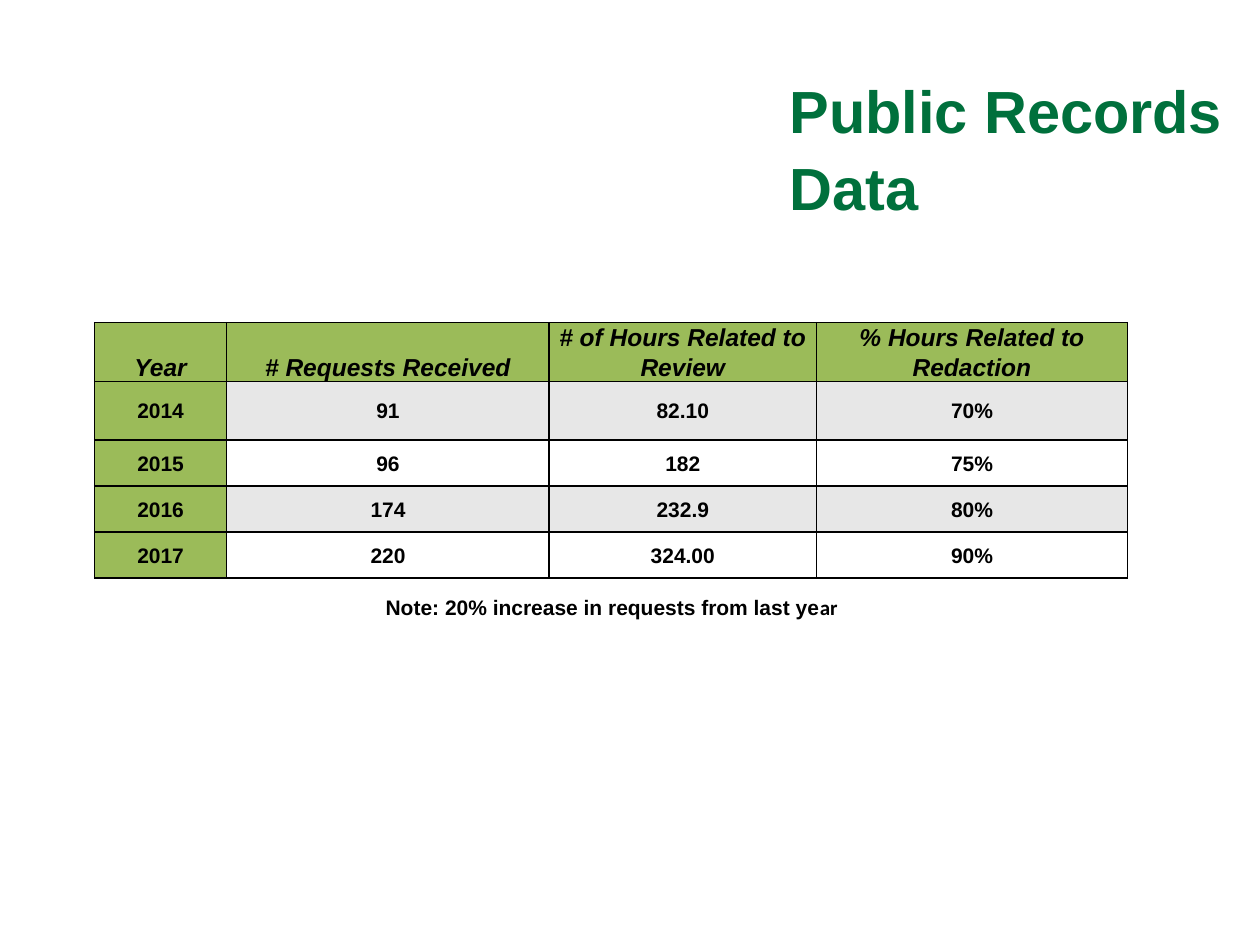
"""Build the Public Records Data slide with its yearly request table."""
from dataclasses import dataclass

from lxml.etree import SubElement
from pptx import Presentation
from pptx.dml.color import RGBColor as RGB
from pptx.enum.text import MSO_ANCHOR as Anchor, MSO_AUTO_SIZE as AutoSize, PP_ALIGN as Align
from pptx.oxml.ns import qn
from pptx.util import Pt


@dataclass(frozen=True)
class Theme:
    """Colours, fonts and type sizes of the slide."""
    title: RGB = RGB(0x00, 0x70, 0x3C)
    ink: RGB = RGB(0, 0, 0)
    accent: RGB = RGB(0x9B, 0xBB, 0x59)
    band: RGB = RGB(0xE7, 0xE7, 0xE7)
    plain: RGB = RGB(0xFF, 0xFF, 0xFF)
    font: str = "Arial"
    alt_font: str = "Calibri"
    title_size: float = 34
    header_size: float = 14
    body_size: float = 12
    spacing: float = 1.07
    border: float = 1


@dataclass(frozen=True)
class Box:
    """A rectangle in points."""
    left: float
    top: float
    width: float
    height: float

    def lengths(self) -> tuple:
        """Return the four sides as lengths."""
        return Pt(self.left), Pt(self.top), Pt(self.width), Pt(self.height)


@dataclass(frozen=True)
class YearRow:
    """Public records figures for one year."""
    year: str
    requests: str
    hours: str
    redaction: str

    def values(self) -> tuple:
        """Return the figures in column order."""
        return self.year, self.requests, self.hours, self.redaction


THEME = Theme()
TITLE_BOX = Box(444, 36, 269.5, 84)
TABLE_BOX = Box(54, 184.3, 590.4, 148.8)
NOTE_BOX = Box(139, 336.2, 421, 36)
COLUMN_WIDTHS = (75.6, 184.3, 152.7, 177.8)
ROW_HEIGHTS = (33.5, 33.5, 26.3, 26.3, 26.3)
HEADERS = ("Year", "# Requests Received", "# of Hours Related to Review",
           "% Hours Related to Redaction")
YEARS = (
    YearRow("2014", "91", "82.10", "70%"),
    YearRow("2015", "96", "182", "75%"),
    YearRow("2016", "174", "232.9", "80%"),
    YearRow("2017", "220", "324.00", "90%"),
)


def add_run(p, text: str, size: float, color: RGB = THEME.ink,
            font: str = THEME.font, italic: bool = False) -> None:
    """Add one bold run to a paragraph."""
    r = p.add_run()
    r.text = text
    r.font.name = font
    r.font.size = Pt(size)
    r.font.bold = True
    r.font.italic = italic
    r.font.color.rgb = color


def set_borders(cell) -> None:
    """Draw a thin line on all four sides of a cell."""
    tc_pr = cell._tc.get_or_add_tcPr()
    for i, side in enumerate(("lnL", "lnR", "lnT", "lnB")):
        ln = tc_pr.makeelement(qn(f"a:{side}"), {"w": str(Pt(THEME.border))})
        fill = SubElement(ln, qn("a:solidFill"))
        SubElement(fill, qn("a:srgbClr"), val=str(THEME.ink))
        tc_pr.insert(i, ln)


def fill_cell(cell, text: str, fill: RGB, header: bool) -> None:
    """Format one table cell and write its text."""
    cell.fill.solid()
    cell.fill.fore_color.rgb = fill
    cell.margin_left = cell.margin_right = Pt(5)
    cell.margin_top = cell.margin_bottom = Pt(0)
    cell.vertical_anchor = Anchor.BOTTOM if header else Anchor.MIDDLE
    set_borders(cell)
    p = cell.text_frame.paragraphs[0]
    p.alignment = Align.CENTER
    p.line_spacing = THEME.spacing
    add_run(p, text, THEME.header_size if header else THEME.body_size, italic=header)


def add_title(s) -> None:
    """Place and format the title placeholder."""
    sp = s.shapes.title
    sp.left, sp.top, sp.width, sp.height = TITLE_BOX.lengths()
    tf = sp.text_frame
    tf.word_wrap = True
    tf.auto_size = AutoSize.NONE
    tf.vertical_anchor = Anchor.TOP
    p = tf.paragraphs[0]
    p.alignment = Align.LEFT
    p.line_spacing = THEME.spacing
    add_run(p, "Public Records Data", THEME.title_size, THEME.title)


def add_records_table(s) -> None:
    """Add the table of yearly figures."""
    rows = (HEADERS, *(y.values() for y in YEARS))
    table = s.shapes.add_table(len(rows), len(HEADERS), *TABLE_BOX.lengths()).table
    table.first_row = table.horz_banding = False
    for column, width in zip(table.columns, COLUMN_WIDTHS):
        column.width = Pt(width)
    for row, height in zip(table.rows, ROW_HEIGHTS):
        row.height = Pt(height)
    for i, values in enumerate(rows):
        row_fill = THEME.band if i % 2 else THEME.plain
        for j, text in enumerate(values):
            fill = THEME.accent if i == 0 or j == 0 else row_fill
            fill_cell(table.cell(i, j), text, fill, header=i == 0)


def add_note(s) -> None:
    """Add the note below the table."""
    tf = s.shapes.add_textbox(*NOTE_BOX.lengths()).text_frame
    tf.word_wrap = True
    p = tf.paragraphs[0]
    p.alignment = Align.CENTER
    add_run(p, "Note: 20% increase in requests from last ye", THEME.body_size)
    add_run(p, "ar", THEME.body_size, font=THEME.alt_font)


def main() -> None:
    """Create and save the presentation."""
    prs = Presentation()
    prs.slide_width, prs.slide_height = Pt(720), Pt(540)
    s = prs.slides.add_slide(prs.slide_layouts.get_by_name("Title Only"))
    add_title(s)
    add_records_table(s)
    add_note(s)
    prs.save("out.pptx")


if __name__ == "__main__":
    main()
